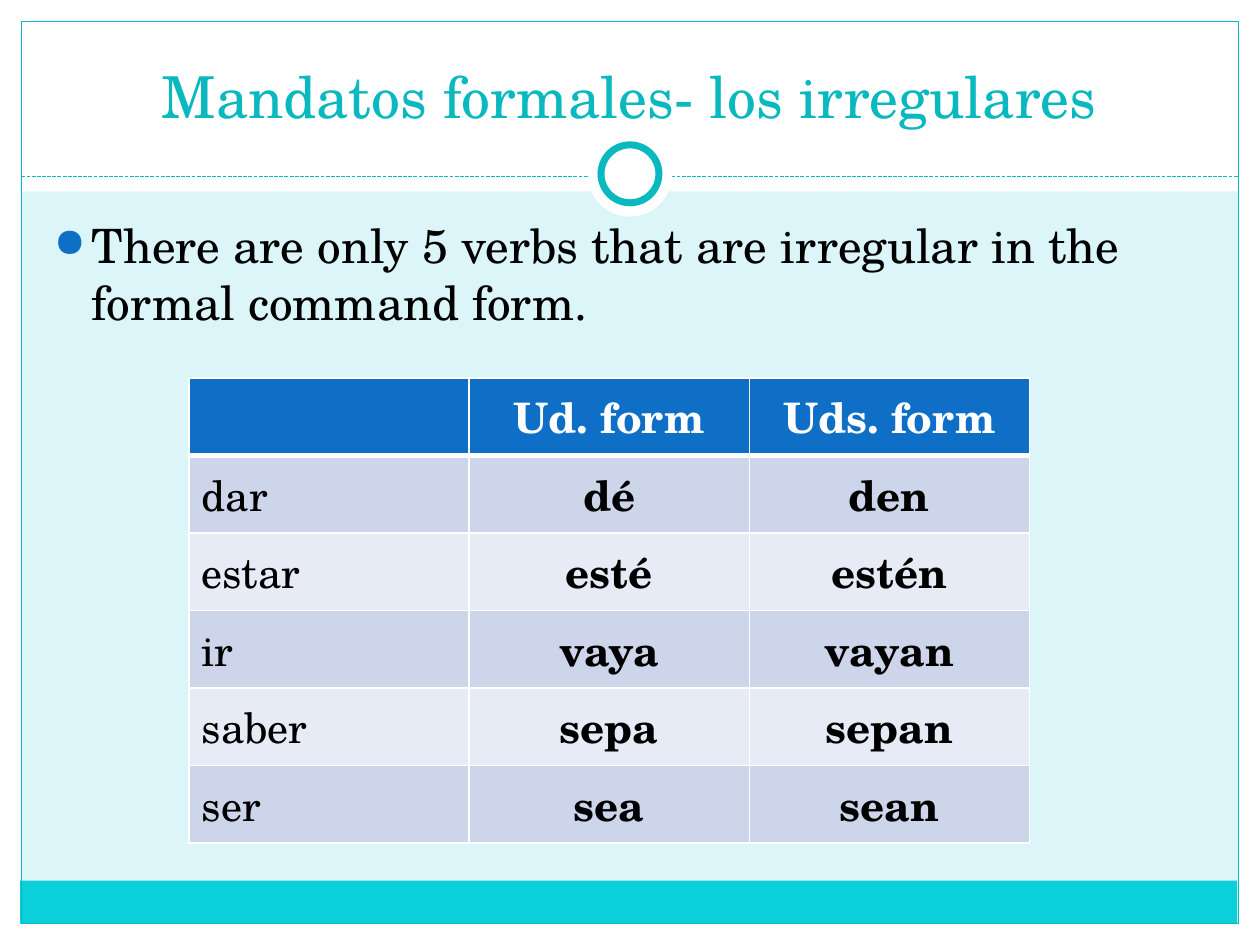
"""Build a slide about irregular formal commands in Spanish with a table of forms."""
from dataclasses import dataclass
from typing import Optional

import pptx
import pptx.dml.color
import pptx.enum.dml
import pptx.enum.shapes
import pptx.enum.text
import pptx.oxml
import pptx.oxml.ns
import pptx.util

COLS, ROWS = 100, 75
WIDTH, HEIGHT = pptx.util.Inches(10), pptx.util.Inches(7.5)
FONT = "TeX Gyre Schola"
COLORS = {
    "background": "DBF5F9",
    "white": "FFFFFF",
    "band": "0BD0D9",
    "accent": "0AB8BF",
    "header": "0F6FC6",
    "odd": "CCD5EA",
    "even": "E7EBF5",
    "text": "000000",
}
SHAPE = pptx.enum.shapes.MSO_SHAPE
ALIGN = pptx.enum.text.PP_ALIGN
ANCHOR = pptx.enum.text.MSO_ANCHOR


@dataclass(frozen=True)
class Box:
    """A place on the slide grid, in columns and rows."""
    col: float
    row: float
    cols: float
    rows: float

    def emu(self) -> tuple[int, int, int, int]:
        """Return left, top, width and height as lengths."""
        return x(self.col), y(self.row), x(self.cols), y(self.rows)


@dataclass(frozen=True)
class Decoration:
    """A plain preset shape with an optional fill and outline."""
    box: Box
    fill: Optional[str] = "white"
    line_width: float = 0
    kind: SHAPE = SHAPE.RECTANGLE


@dataclass(frozen=True)
class Verb:
    """An irregular verb with its two formal commands."""
    infinitive: str
    ud: str
    uds: str


EDGE = 1.7
BACKDROP = [
    Decoration(Box(0, ROWS - EDGE, COLS, EDGE)),
    Decoration(Box(0, 0, COLS, 15.2)),
    Decoration(Box(0, 0, EDGE, ROWS)),
    Decoration(Box(COLS - EDGE, 0, EDGE, ROWS)),
    Decoration(Box(1.6, 69.9, 96.6, 3.4), "band"),
    Decoration(Box(EDGE, EDGE, COLS - 2 * EDGE, ROWS - 2 * EDGE), None, 0.75),
]
RING = [
    Decoration(Box(46.65, 10.5, 6.7, 6.7), kind=SHAPE.OVAL),
    Decoration(Box(47.7, 11.5, 4.6, 4.6), line_width=4, kind=SHAPE.OVAL),
]
DIVIDER_ROW = 14
TITLE_BOX = Box(3.3, 2.5, 93.3, 8.3)
BODY_BOX = Box(3.3, 16.7, 93, 50)
TABLE_BOX = Box(15, 30, 66.7, 36.9)
HEADINGS = ("", "Ud. form", "Uds. form")
VERBS = [
    Verb("dar", "dé", "den"),
    Verb("estar", "esté", "estén"),
    Verb("ir", "vaya", "vayan"),
    Verb("saber", "sepa", "sepan"),
    Verb("ser", "sea", "sean"),
]


def x(cols: float) -> int:
    """Convert grid columns to a length."""
    return round(WIDTH * cols / COLS)


def y(rows: float) -> int:
    """Convert grid rows to a length."""
    return round(HEIGHT * rows / ROWS)


def rgb(name: str) -> pptx.dml.color.RGBColor:
    """Look up a named colour."""
    return pptx.dml.color.RGBColor.from_string(COLORS[name])


def add_decoration(s, item: Decoration) -> None:
    """Draw one preset shape."""
    sp = s.shapes.add_shape(item.kind, *item.box.emu())
    sp.shadow.inherit = False
    if item.fill:
        sp.fill.solid()
        sp.fill.fore_color.rgb = rgb(item.fill)
    else:
        sp.fill.background()
    if item.line_width:
        sp.line.color.rgb = rgb("accent")
        sp.line.width = pptx.util.Pt(item.line_width)
    else:
        sp.line.fill.background()


def add_divider(s) -> None:
    """Draw the dashed line under the title."""
    line = s.shapes.add_connector(
        pptx.enum.shapes.MSO_CONNECTOR.STRAIGHT,
        x(EDGE), y(DIVIDER_ROW), x(COLS - EDGE), y(DIVIDER_ROW))
    line.line.color.rgb = rgb("accent")
    line.line.width = pptx.util.Pt(0.75)
    line.line.dash_style = pptx.enum.dml.MSO_LINE.SQUARE_DOT
    pptx.oxml.ns.qn("a:effectLst")
    line._element.spPr.append(pptx.oxml.parse_xml(
        f'<a:effectLst {pptx.oxml.ns.nsdecls("a")}/>'))


def write(p, text: str, size: float, color: str, bold: bool = False) -> None:
    """Add one run to a paragraph."""
    r = p.add_run()
    r.text = text
    r.font.name = FONT
    r.font.size = pptx.util.Pt(size)
    r.font.bold = bold
    r.font.color.rgb = rgb(color)


def add_text(s, box: Box, anchor: ANCHOR, text: str, size: float, color: str):
    """Add a wrapping text box and return its paragraph."""
    tf = s.shapes.add_textbox(*box.emu()).text_frame
    tf.word_wrap = True
    tf.vertical_anchor = anchor
    p = tf.paragraphs[0]
    write(p, text, size, color)
    return p


def add_bullet(p) -> None:
    """Give a paragraph a hanging round bullet."""
    pPr = p._p.get_or_add_pPr()
    pPr.set("marL", str(x(3)))
    pPr.set("indent", str(-x(3)))
    ns = pptx.oxml.ns.nsdecls("a")
    for tag in (f'<a:buClr {ns}><a:srgbClr val="{COLORS["header"]}"/></a:buClr>',
                f'<a:buSzPct {ns} val="85000"/>',
                f'<a:buChar {ns} char="●"/>'):
        pPr.append(pptx.oxml.parse_xml(tag))


def set_borders(cell, bottom: float) -> None:
    """Give a cell white borders, with its own bottom width."""
    tcPr = cell._tc.get_or_add_tcPr()
    ns = pptx.oxml.ns.nsdecls("a")
    for i, (side, width) in enumerate(zip("LRTB", (1, 1, 1, bottom))):
        tcPr.insert(i, pptx.oxml.parse_xml(
            f'<a:ln{side} {ns} w="{pptx.util.Pt(width)}"><a:solidFill>'
            f'<a:srgbClr val="{COLORS["white"]}"/></a:solidFill></a:ln{side}>'))


def add_verb_table(s) -> None:
    """Draw the table of verbs and commands."""
    rows = [HEADINGS] + [(v.infinitive, v.ud, v.uds) for v in VERBS]
    table = s.shapes.add_table(len(rows), len(HEADINGS), *TABLE_BOX.emu()).table
    for i, texts in enumerate(rows):
        fill = "header" if i == 0 else "odd" if i % 2 else "even"
        for j, text in enumerate(texts):
            cell = table.cell(i, j)
            cell.fill.solid()
            cell.fill.fore_color.rgb = rgb(fill)
            cell.vertical_anchor = ANCHOR.MIDDLE
            set_borders(cell, 1 if i else 3)
            if text:
                p = cell.text_frame.paragraphs[0]
                p.alignment = ALIGN.CENTER if j else ALIGN.LEFT
                write(p, text, 24, "text" if i else "white", bold=j > 0)


def main() -> None:
    """Assemble and save the slide."""
    prs = pptx.Presentation()
    prs.slide_width, prs.slide_height = WIDTH, HEIGHT
    s = prs.slides.add_slide(prs.slide_layouts[6])
    s.background.fill.solid()
    s.background.fill.fore_color.rgb = rgb("background")
    for item in BACKDROP:
        add_decoration(s, item)
    add_divider(s)
    for item in RING:
        add_decoration(s, item)
    title = add_text(s, TITLE_BOX, ANCHOR.BOTTOM,
                     "Mandatos formales- los irregulares", 33, "accent")
    title.alignment = ALIGN.CENTER
    add_bullet(add_text(
        s, BODY_BOX, ANCHOR.TOP,
        "There are only 5 verbs that are irregular in the formal command form.",
        27, "text"))
    add_verb_table(s)
    prs.save("out.pptx")


if __name__ == "__main__":
    main()
